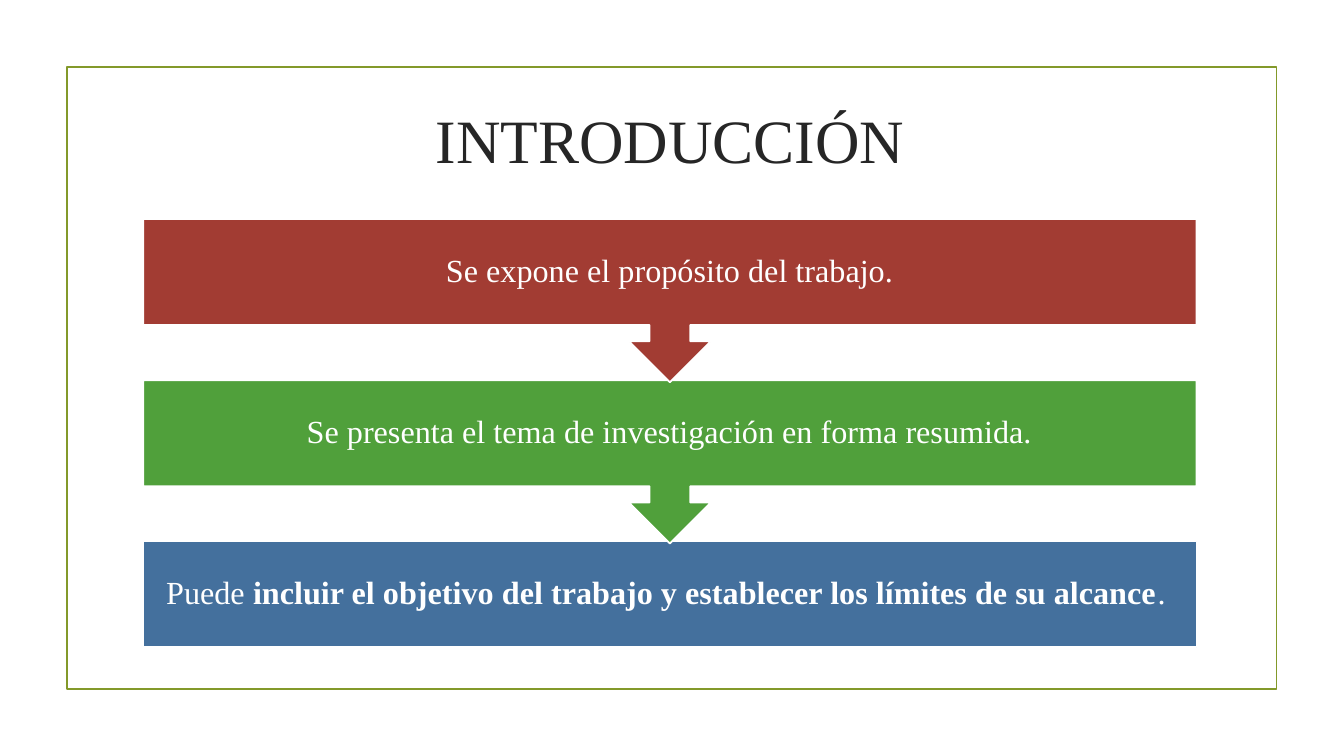
from pptx import Presentation
from pptx.dml.color import RGBColor
from pptx.enum import shapes, text
from pptx.util import Pt

COLORS = {
    "frame": "83992A", "title": "262626", "white": "FFFFFF",
    "red": "A23C33", "green": "50A03B", "blue": "44709D",
}
FONT = "Times New Roman"
LINE_WIDTH = 1.25
BODY_SHARE = 0.65  # part of a callout's height above its arrow

# Each step: colour and runs of (wording, bold)
STEPS = [
    ("red", [("Se expone el propósito del trabajo.", False)]),
    ("green", [("Se presenta el tema de investigación en forma resumida.", False)]),
    ("blue", [
        ("Puede ", False),
        ("incluir el objetivo del trabajo y establecer los límites de su alcance", True),
        (". ", False),
    ]),
]


def color(name):
    return RGBColor.from_string(COLORS[name])


def write(shape, runs, size, color_name, inset, line_spacing=1.0):
    frame = shape.text_frame
    frame_format = {
        "word_wrap": True,
        "vertical_anchor": text.MSO_ANCHOR.MIDDLE,
        "margin_left": Pt(inset), "margin_right": Pt(inset),
        "margin_top": Pt(inset), "margin_bottom": Pt(inset),
    }
    for name, value in frame_format.items():
        setattr(frame, name, value)
    paragraph = frame.paragraphs[0]
    paragraph.alignment = text.PP_ALIGN.CENTER
    paragraph.line_spacing = line_spacing
    for wording, bold in runs:
        run = paragraph.add_run()
        run.text = wording
        for name, value in {"name": FONT, "size": Pt(size), "bold": bold}.items():
            setattr(run.font, name, value)
        run.font.color.rgb = color(color_name)


def add_box(slide, kind, box, line, fill=None):
    shape = slide.shapes.add_shape(kind, *map(Pt, box))
    shape.shadow.inherit = False
    if fill:
        shape.fill.solid()
        shape.fill.fore_color.rgb = color(fill)
    else:
        shape.fill.background()
    shape.line.color.rgb = color(line)
    shape.line.width = Pt(LINE_WIDTH)
    return shape


def add_title(slide, box, wording):
    title = slide.shapes.add_textbox(*map(Pt, box))
    write(title, [(wording, False)], 44, "title", 4)


def add_steps(slide, box, steps, pitch, overlap):
    left, top, width, height = box
    body_height = height - pitch * (len(steps) - 1)
    # Last step first, so that each arrow tip lies over the next bar
    for index, (fill, runs) in reversed(list(enumerate(steps))):
        last = index == len(steps) - 1
        kind = (shapes.MSO_SHAPE.RECTANGLE if last
                else shapes.MSO_SHAPE.DOWN_ARROW_CALLOUT)
        step_height = body_height if last else pitch + overlap
        step_box = (left, top + index * pitch, width, step_height)
        step = add_box(slide, kind, step_box, "white", fill)
        if not last:
            step.adjustments[3] = BODY_SHARE
        write(step, runs, 23, "white", 13, line_spacing=0.9)


def main():
    presentation = Presentation()
    presentation.slide_width, presentation.slide_height = Pt(960), Pt(540)
    slide = presentation.slides.add_slide(presentation.slide_layouts[6])

    # Frame, heading and chain of steps
    add_box(slide, shapes.MSO_SHAPE.RECTANGLE, (47.8, 48, 864, 444.2), "frame")
    add_title(slide, (101.5, 62.6, 754.6, 72.7), "INTRODUCCIÓN")
    add_steps(slide, (102.3, 156.4, 752.4, 306), STEPS, pitch=115.2, overlap=1.4)

    presentation.save("out.pptx")


if __name__ == "__main__":
    main()
